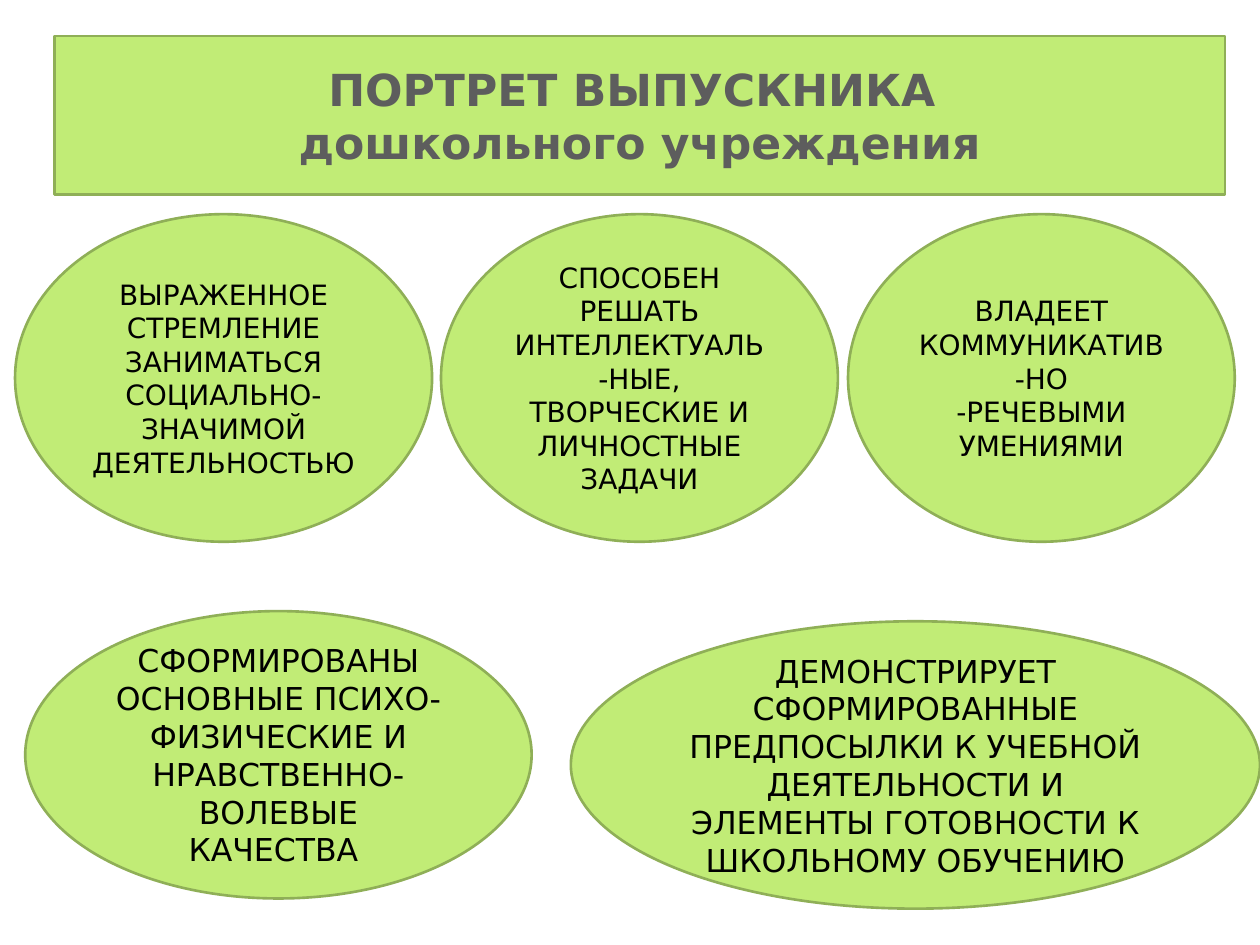
from pptx import Presentation
from pptx.dml.color import RGBColor
from pptx.enum.shapes import MSO_SHAPE
from pptx.enum.text import MSO_ANCHOR, PP_ALIGN
from pptx.util import Pt

# Content
TITLE = ["ПОРТРЕТ ВЫПУСКНИКА ", "дошкольного учреждения"]

# Each row: height, text size, ovals as (left, top, width, paragraphs)
ROWS = [
    (187.2, 16, [
        (8.6, 122.4, 238.3, ["ВЫРАЖЕННОЕ СТРЕМЛЕНИЕ ЗАНИМАТЬСЯ "
                             "СОЦИАЛЬНО-ЗНАЧИМОЙ ДЕЯТЕЛЬНОСТЬЮ"]),
        (252, 122.4, 226.8, ["СПОСОБЕН РЕШАТЬ ИНТЕЛЛЕКТУАЛЬ-НЫЕ, "
                             "ТВОРЧЕСКИЕ И ЛИЧНОСТНЫЕ ЗАДАЧИ"]),
        (484.6, 122.4, 221, ["ВЛАДЕЕТ КОММУНИКАТИВ-НО",
                             "-РЕЧЕВЫМИ УМЕНИЯМИ"]),
    ]),
    (164.2, 18, [
        (14.4, 349.2, 289.4, ["СФОРМИРОВАНЫ ОСНОВНЫЕ ПСИХО-ФИЗИЧЕСКИЕ И "
                              "НРАВСТВЕННО-ВОЛЕВЫЕ КАЧЕСТВА "]),
        (326.2, 355, 393.8, ["ДЕМОНСТРИРУЕТ СФОРМИРОВАННЫЕ ПРЕДПОСЫЛКИ "
                             "К УЧЕБНОЙ ДЕЯТЕЛЬНОСТИ И ЭЛЕМЕНТЫ "
                             "ГОТОВНОСТИ К ШКОЛЬНОМУ ОБУЧЕНИЮ"]),
    ]),
]

COLORS = {"fill": "C1EC76", "line": "8FAF57", "title": "5D5D5D", "text": "000000"}
FONT = "DejaVu Sans"


def add_panel(page, kind, place, lines, color, **font_format):
    panel = page.shapes.add_shape(kind, *(Pt(value) for value in place))
    panel.shadow.inherit = False
    panel.fill.solid()
    panel.fill.fore_color.rgb = RGBColor.from_string(COLORS["fill"])
    panel.line.color.rgb = RGBColor.from_string(COLORS["line"])
    panel.line.width = Pt(1.5)

    frame = panel.text_frame
    frame.word_wrap = True
    frame.vertical_anchor = MSO_ANCHOR.MIDDLE
    for index, line in enumerate(lines):
        para = frame.add_paragraph() if index else frame.paragraphs[0]
        para.alignment = PP_ALIGN.CENTER
        span = para.add_run()
        span.text = line
        span.font.color.rgb = RGBColor.from_string(COLORS[color])
        for name, value in font_format.items():
            setattr(span.font, name, value)


deck = Presentation()
deck.slide_width, deck.slide_height = Pt(720), Pt(540)
page = deck.slides.add_slide(deck.slide_layouts[6])

# Title banner
add_panel(page, MSO_SHAPE.RECTANGLE, (31, 20.5, 669, 90.5), TITLE, "title",
          name=FONT, size=Pt(25.2), bold=True)

# Graduate qualities
for height, size, ovals in ROWS:
    for left, top, width, lines in ovals:
        add_panel(page, MSO_SHAPE.OVAL, (left, top, width, height), lines, "text",
                  name=FONT, size=Pt(size), bold=False)

deck.save("out.pptx")
